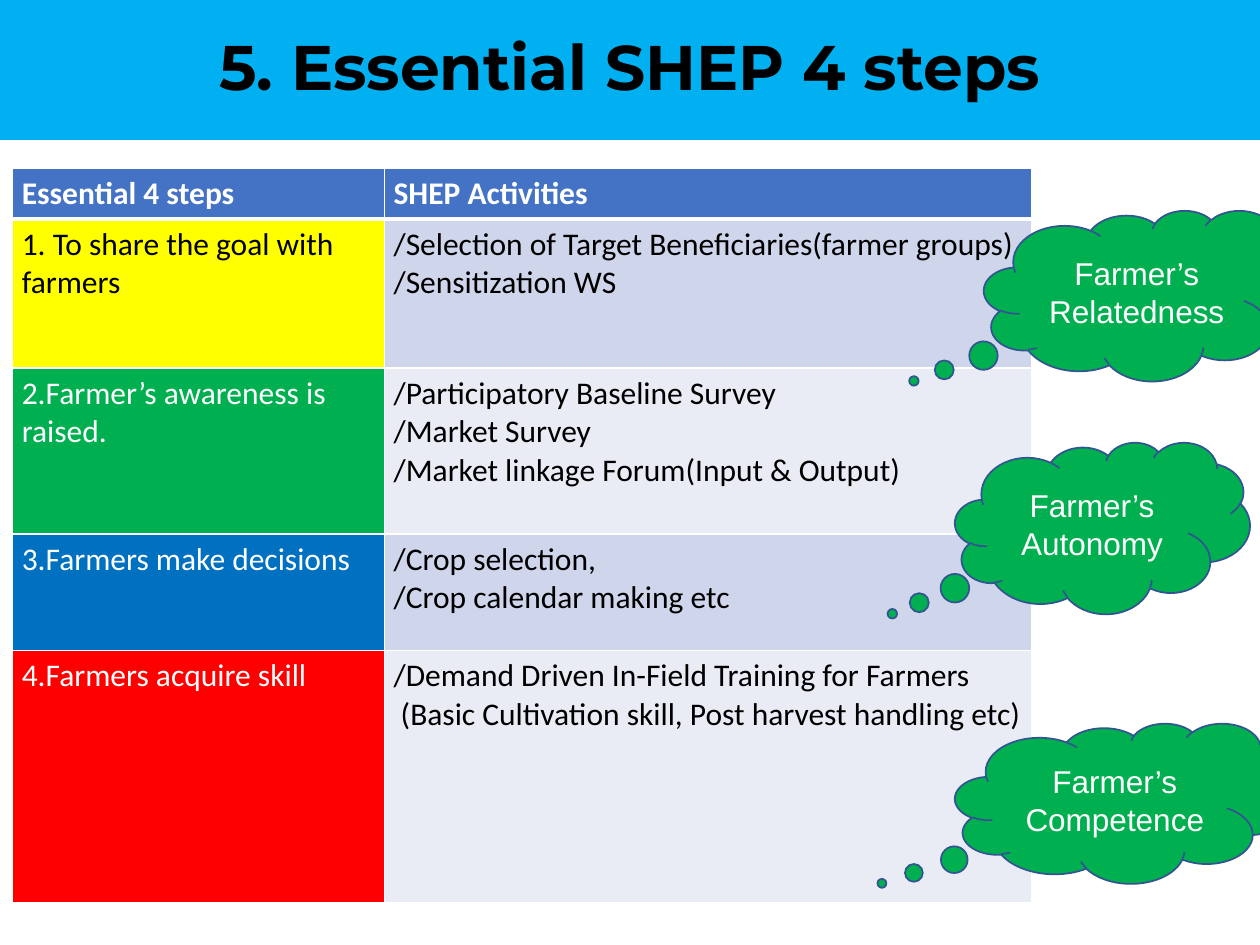
from dataclasses import dataclass

from lxml.etree import SubElement
from pptx import Presentation
from pptx.dml.color import RGBColor
from pptx.enum.shapes import MSO_SHAPE as Preset
from pptx.enum.text import MSO_ANCHOR as Anchor, PP_ALIGN as Align
from pptx.oxml.ns import qn
from pptx.util import Pt

COLORS = {
    "black": "000000", "white": "FFFFFF", "sky": "00B0F0", "header": "4472C4",
    "yellow": "FFFF00", "green": "00B050", "blue": "0070C0", "red": "FF0000",
    "band_dark": "CFD5EA", "band_light": "E9EBF5", "outline": "325491",
}
COLUMN_WIDTHS = (212.5, 370)
HEADER_HEIGHT = 29


@dataclass(frozen=True)
class Step:
    name: str
    activities: tuple[str, ...]
    fill: str
    text_color: str
    height: float


@dataclass(frozen=True)
class Cloud:
    text: str
    left: float
    top: float
    width: float
    height: float


STEPS = (
    Step("1. To share the goal with farmers",
         ("/Selection of Target Beneficiaries(farmer groups)", "/Sensitization WS"),
         "yellow", "black", 85),
    Step("2.Farmer’s awareness is raised.",
         ("/Participatory Baseline Survey", "/Market Survey",
          "/Market linkage Forum(Input & Output)"),
         "green", "white", 95),
    Step("3.Farmers make decisions",
         ("/Crop selection,", "/Crop calendar making etc"),
         "blue", "white", 66.5),
    Step("4.Farmers acquire skill",
         ("/Demand Driven In-Field Training for Farmers",
          " (Basic Cultivation skill, Post harvest handling etc)"),
         "red", "white", 144.5),
)
CLOUDS = (
    Cloud("Farmer’s Relatedness", 562.3, 120.2, 188, 97.5),
    Cloud("Farmer’s Autonomy", 545.8, 252.7, 168.5, 98),
    Cloud("Farmer’s Competence", 545.8, 413.3, 196.5, 91.5),
)


def rgb(name: str) -> RGBColor:
    return RGBColor.from_string(COLORS[name])


def write(frame, lines: tuple[str, ...], font: str, size: float, color: str,
          bold: bool = False, align: Align = Align.LEFT) -> None:
    """Put each line in a paragraph of its own."""
    frame.word_wrap = True
    for index, line in enumerate(lines):
        para = frame.add_paragraph() if index else frame.paragraphs[0]
        para.alignment = align
        span = para.add_run()
        span.text = line
        span.font.name = font
        span.font.size = Pt(size)
        span.font.bold = bold
        span.font.color.rgb = rgb(color)


def add_box(page, preset: Preset, left: float, top: float, width: float,
            height: float, fill: str):
    box = page.shapes.add_shape(preset, Pt(left), Pt(top), Pt(width), Pt(height))
    box.shadow.inherit = False
    box.fill.solid()
    box.fill.fore_color.rgb = rgb(fill)
    box.text_frame.vertical_anchor = Anchor.MIDDLE
    return box


def add_title(page, text: str) -> None:
    box = add_box(page, Preset.RECTANGLE, 0, 0, 720, 80, "sky")
    box.line.fill.background()
    write(box.text_frame, (text,), "Montserrat", 36, "black", True, Align.CENTER)
    box.text_frame.paragraphs[0].line_spacing = 0.9


def add_cloud(page, cloud: Cloud) -> None:
    box = add_box(page, Preset.CLOUD_CALLOUT, cloud.left, cloud.top,
                  cloud.width, cloud.height, "green")
    box.adjustments[0] = -0.713
    box.adjustments[1] = 0.5
    box.line.color.rgb = rgb("outline")
    box.line.width = Pt(1)
    write(box.text_frame, (cloud.text,), "Arial", 18, "white", align=Align.CENTER)


def set_borders(cell, top: float, bottom: float) -> None:
    """Draw white cell borders; must run before the cell gets its fill."""
    properties = cell._tc.get_or_add_tcPr()
    for side, width in (("L", 1), ("R", 1), ("T", top), ("B", bottom)):
        line = SubElement(properties, qn(f"a:ln{side}"), w=str(Pt(width)))
        solid = SubElement(line, qn("a:solidFill"))
        SubElement(solid, qn("a:srgbClr"), val=COLORS["white"])


def fill_cell(cell, lines: tuple[str, ...], fill: str, color: str,
              bold: bool = False, top: float = 1, bottom: float = 1) -> None:
    set_borders(cell, top, bottom)
    cell.fill.solid()
    cell.fill.fore_color.rgb = rgb(fill)
    cell.margin_left = cell.margin_right = Pt(5.25)
    cell.margin_top = cell.margin_bottom = Pt(3.6)
    write(cell.text_frame, lines, "Calibri", 18, color, bold)


def add_steps_table(page) -> None:
    heights = (HEADER_HEIGHT, *(step.height for step in STEPS))
    table = page.shapes.add_table(
        len(heights), len(COLUMN_WIDTHS), Pt(7.2), Pt(96),
        Pt(sum(COLUMN_WIDTHS)), Pt(sum(heights))).table
    for column, width in zip(table.columns, COLUMN_WIDTHS):
        column.width = Pt(width)
    for row, height in zip(table.rows, heights):
        row.height = Pt(height)
    for index, heading in enumerate(("Essential 4 steps", "SHEP Activities")):
        fill_cell(table.cell(0, index), (heading,), "header", "white", True, bottom=3)
    for index, step in enumerate(STEPS, 1):
        top = 3 if index == 1 else 1
        band = "band_dark" if index % 2 else "band_light"
        fill_cell(table.cell(index, 0), (step.name,), step.fill, step.text_color, top=top)
        fill_cell(table.cell(index, 1), step.activities, band, "black", top=top)


def main() -> None:
    deck = Presentation()
    deck.slide_width, deck.slide_height = Pt(720), Pt(540)
    page = deck.slides.add_slide(deck.slide_layouts[6])
    add_title(page, "5. Essential SHEP 4 steps")
    add_steps_table(page)
    for cloud in CLOUDS:
        add_cloud(page, cloud)
    deck.save("out.pptx")


if __name__ == "__main__":
    main()
